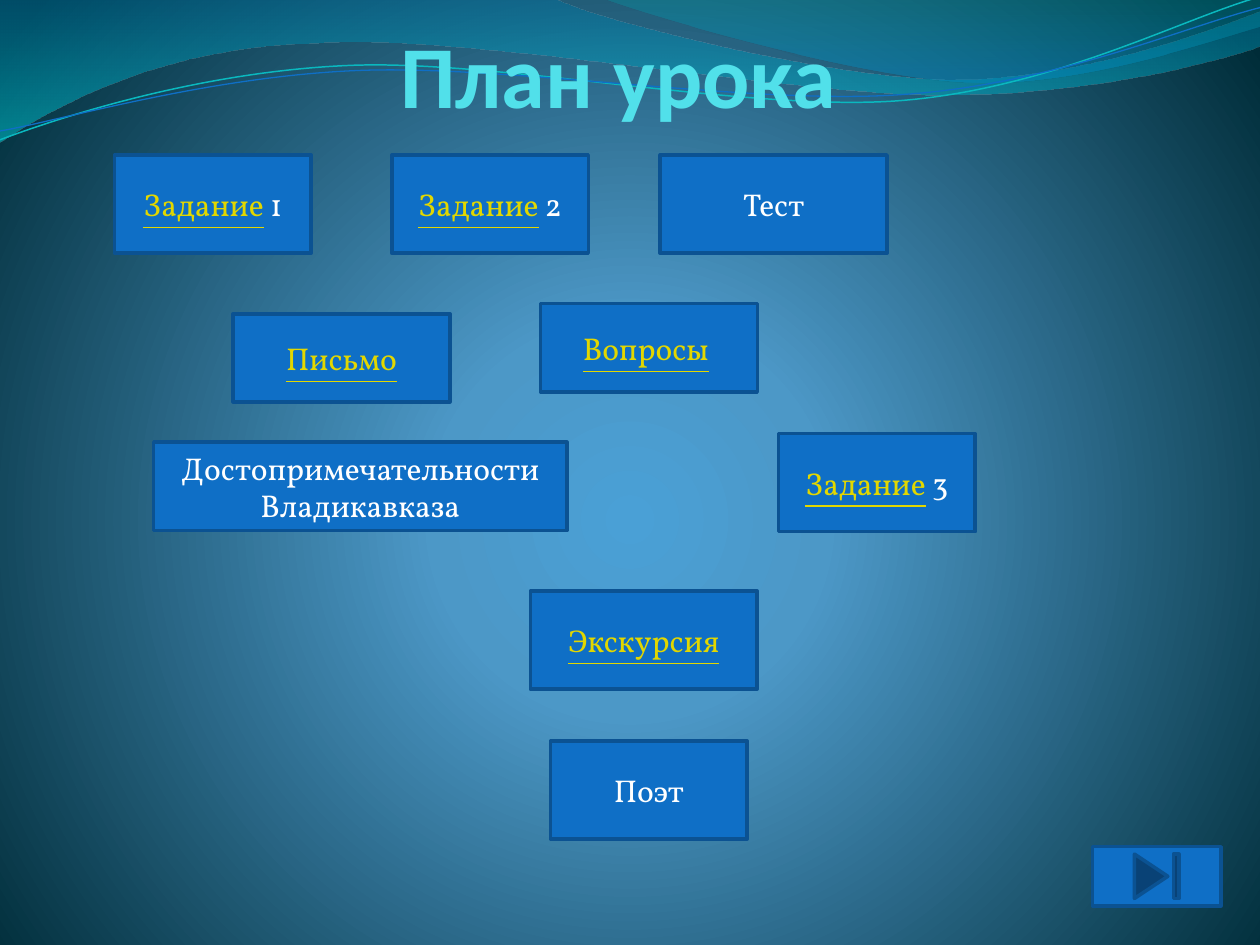
"""Build the lesson plan slide with its buttons over a wavy blue background."""
import math

from lxml import etree
from pptx import Presentation, util as u
from pptx.dml.color import RGBColor
from pptx.enum import shapes, text
from pptx.oxml import ns

WIDTH, HEIGHT = u.Inches(10), u.Inches(7.5)
COLOURS = {
    "button": "0F6FC6", "edge": "0B5292", "label": "FFFFFF", "link": "E2D700",
    "title": "51E0EA", "teal_line": "0AB8BF", "blue_line": "0F6FC6",
}
BACKGROUND = [(0, "4AA0D6", 100), (25, "4C98C7", 100), (100, "002C38", 100)]
GLOW = {"l": 10, "t": 110, "r": 10, "b": 100}

TITLE = "План урока"
TITLE_BOX = (6.2, 3.07, 85.9, 10.27)
SIZES = {
    "small": (15.6, 10.4), "medium": (18, 10.4),
    "low": (17.2, 9.33), "wide": (32.8, 9.33), "end": (10.2, 6.27),
}
BUTTONS = [
    (18.5, 33.2, "low", "Письмо", ""),
    (42.9, 32.13, "low", "Вопросы", " "),
    (12.2, 46.8, "wide", "", "Достопримечательности Владикавказа"),
    (9.1, 16.4, "small", "Задание", " 1"),
    (31.1, 16.4, "small", "Задание", " 2"),
    (52.4, 16.4, "medium", "", "Тест"),
    (43.7, 78.4, "small", "", "Поэт"),
    (61.8, 45.87, "small", "Задание", " 3"),
    (42.1, 62.53, "medium", "Экскурсия", ""),
]
END_BUTTON = (86.7, 89.6)

BANDS = [
    ((-0.01, -0.01, 10.02, 1.14),
     [(0, "0074A1", 45), (100, "00C6CF", 55)],
     [(0, 0), (4.4, -0.01),
      (4.76, 0.17, 6.64, 0.63, 7.58, 0.63), (8.53, 0.63, 9.58, 0.26, 10, 0.09),
      (10.01, 0.36),
      (9.83, 0.44, 8.7, 0.76, 7.46, 0.75), (6.22, 0.75, 3.82, 0.28, 2.57, 0.34),
      (1.29, 0.36, 0.46, 0.83, -0.01, 1.13), (0, 0)]),
    ((4.79, -0.01, 5.21, 0.7),
     [(0, "00A1A9", 30), (80, "008BBF", 45)],
     [(4.79, -0.01),
      (5.09, 0.11, 6.82, 0.62, 7.69, 0.65), (8.56, 0.69, 9.61, 0.32, 10, 0.21),
      (10, 0), (4.79, -0.01)]),
]
WAVE_TILT = -2.7
WAVES = [
    ((-0.02, 0.22, 10.02, 0.71), "teal_line", 0.85,
     [(0, 1.11), (0.48, 0.93, 1.58, 0.57, 2.77, 0.52),
      (3.95, 0.47, 5.93, 0.89, 7.13, 0.8), (8.33, 0.71, 9.38, 0.15, 9.98, -0.02)]),
    ((-0.02, 0.3, 10.03, 0.58), "blue_line", 0.75,
     [(0, 1.04), (0.47, 0.96, 1.64, 0.61, 2.83, 0.56),
      (4.03, 0.51, 5.97, 0.84, 7.17, 0.75), (8.36, 0.67, 9.41, 0.21, 10, 0.06)]),
]


def rgb(name):
    return RGBColor.from_string(COLOURS[name])


def place(left, top, width, height):
    return [int(whole * share / 100) for whole, share in
            zip((WIDTH, HEIGHT) * 2, (left, top, width, height))]


def set_gradient(holder, stops, glow=None):
    gradient = etree.Element(ns.qn("a:gradFill"), rotWithShape="1")
    stop_list = etree.SubElement(gradient, ns.qn("a:gsLst"))
    for position, colour, opacity in stops:
        stop = etree.SubElement(stop_list, ns.qn("a:gs"), pos=str(position * 1000))
        shade = etree.SubElement(stop, ns.qn("a:srgbClr"), val=colour)
        if opacity < 100:
            etree.SubElement(shade, ns.qn("a:alpha"), val=str(opacity * 1000))
    if glow:
        circle = etree.SubElement(gradient, ns.qn("a:path"), path="circle")
        etree.SubElement(circle, ns.qn("a:fillToRect"),
                         {side: str(share * 1000) for side, share in glow.items()})
    else:
        etree.SubElement(gradient, ns.qn("a:lin"), ang="5400000", scaled="0")
    holder.replace(holder.find(ns.qn("a:solidFill")), gradient)


def add_outline(slide, box, steps, tilt=0):
    """Draw lines and cubic curves in a box, turned about its centre by tilt."""
    left, top, width, height = box
    cos, sin = math.cos(math.radians(tilt)), math.sin(math.radians(tilt))

    def local(x, y):
        across, down = x - left - width / 2, y - top - height / 2
        return (u.Inches(across * cos + down * sin + width / 2),
                u.Inches(down * cos - across * sin + height / 2))

    builder = slide.shapes.build_freeform(0, 0)
    builder.add_line_segments([(u.Inches(width), u.Inches(height))], close=False)
    outline = builder.convert_to_shape()
    outline.left, outline.top, outline.width, outline.height = map(u.Inches, box)
    outline.rotation = tilt
    outline.shadow.inherit = False
    route = outline.element.find(".//" + ns.qn("a:path"))
    for part in list(route):
        route.remove(part)
    for index, step in enumerate(steps):
        tag = "moveTo" if index == 0 else "lnTo" if len(step) == 2 else "cubicBezTo"
        segment = etree.SubElement(route, ns.qn("a:" + tag))
        for x, y in map(local, step[::2], step[1::2]):
            etree.SubElement(segment, ns.qn("a:pt"), x=str(int(x)), y=str(int(y)))
    if steps[0] == steps[-1]:
        etree.SubElement(route, ns.qn("a:close"))
    return outline


def add_run(paragraph, words, font, size, colour):
    run = paragraph.add_run()
    run.text = words
    run.font.name, run.font.size = font, u.Pt(size)
    run.font.color.rgb = rgb(colour)
    return run


def add_button(slide, kind, left, top, size):
    button = slide.shapes.add_shape(kind, *place(left, top, *SIZES[size]))
    button.shadow.inherit = False
    button.fill.solid()
    button.fill.fore_color.rgb = rgb("button")
    button.line.color.rgb = rgb("edge")
    button.line.width = u.Pt(2)
    return button


def main():
    deck = Presentation()
    deck.slide_width, deck.slide_height = WIDTH, HEIGHT
    slide = deck.slides.add_slide(deck.slide_layouts[6])
    slide.background.fill.solid()
    set_gradient(slide.element.find(".//" + ns.qn("p:bgPr")), BACKGROUND, GLOW)

    for box, stops, steps in BANDS:
        band = add_outline(slide, box, steps)
        band.fill.solid()
        set_gradient(band.element.spPr, stops)
        band.line.fill.background()
    for box, colour, weight, steps in WAVES:
        wave = add_outline(slide, box, steps, WAVE_TILT)
        wave.fill.background()
        wave.line.color.rgb = rgb(colour)
        wave.line.width = u.Pt(weight)

    frame = slide.shapes.add_textbox(*place(*TITLE_BOX)).text_frame
    frame.word_wrap = True
    frame.vertical_anchor = text.MSO_ANCHOR.BOTTOM
    frame.margin_left = frame.margin_top = frame.margin_bottom = 0
    frame.margin_right = u.Inches(0.02)
    heading = frame.paragraphs[0]
    heading.alignment = text.PP_ALIGN.CENTER
    add_run(heading, TITLE, "Calibri", 50.4, "title").font.bold = True

    for left, top, size, link, label in BUTTONS:
        button = add_button(slide, shapes.MSO_SHAPE.ACTION_BUTTON_CUSTOM, left, top, size)
        button.text_frame.vertical_anchor = text.MSO_ANCHOR.MIDDLE
        caption = button.text_frame.paragraphs[0]
        caption.alignment = text.PP_ALIGN.CENTER
        if link:
            add_run(caption, link, "Vollkorn", 18, "link").font.underline = True
        if label:
            add_run(caption, label, "Vollkorn", 18, "label")
    add_button(slide, shapes.MSO_SHAPE.ACTION_BUTTON_END, *END_BUTTON, "end")

    deck.save("out.pptx")


if __name__ == "__main__":
    main()
